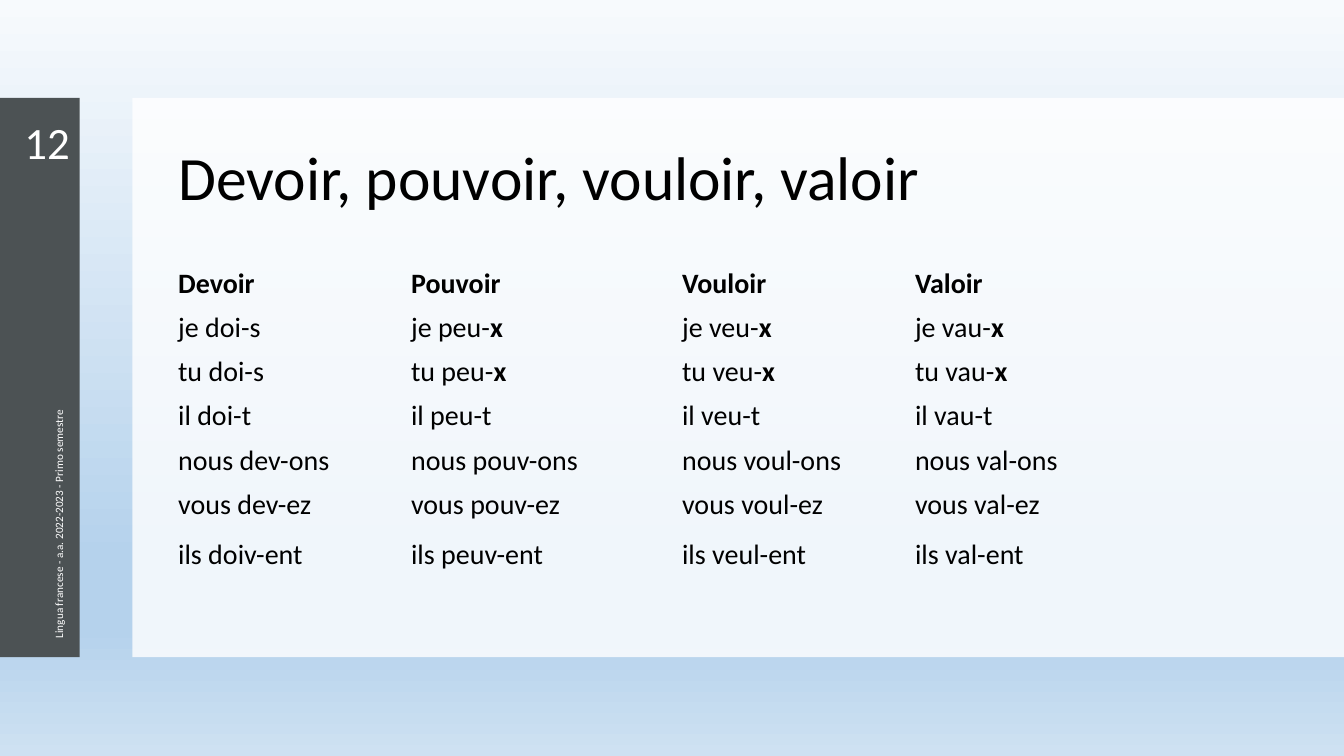
from dataclasses import dataclass

import lxml.etree
import pptx
import pptx.dml.color
import pptx.enum.shapes
import pptx.enum.text
import pptx.oxml.ns
import pptx.shapes.autoshape
import pptx.slide
import pptx.text.text
import pptx.util
from pptx.util import Cm

qn = pptx.oxml.ns.qn
Align = pptx.enum.text.PP_ALIGN
Anchor = pptx.enum.text.MSO_ANCHOR


@dataclass(frozen=True)
class Theme:
    font: str = "Calibri"
    ink: str = "000000"
    light: str = "FFFFFF"
    band: str = "4C5254"
    sky: tuple[tuple[int, str], ...] = (
        (0, "F7FAFD"), (74, "B5D2EC"), (83, "B5D2EC"), (100, "CEE1F2"))
    title_size: int = 44
    number_size: int = 32
    body_size: int = 20
    footer_size: int = 8


@dataclass(frozen=True)
class Frame:
    left: float
    top: float
    width: float
    height: float

    def lengths(self) -> tuple[pptx.util.Length, ...]:
        return Cm(self.left), Cm(self.top), Cm(self.width), Cm(self.height)


@dataclass(frozen=True)
class Verb:
    """A verb with its stems for the singular, nous/vous and ils."""
    name: str
    singular: str
    plural: str
    third_plural: str
    first_ending: str

    def forms(self) -> list[tuple[str, str]]:
        return [
            (f"je {self.singular}-", self.first_ending),
            (f"tu {self.singular}-", self.first_ending),
            (f"il {self.singular}-", "t"),
            (f"nous {self.plural}-", "ons"),
            (f"vous {self.plural}-", "ez"),
            (f"ils {self.third_plural}-", "ent"),
        ]


THEME = Theme()
SLIDE = Frame(0, 0, 33.87, 19.05)
BAND = Frame(0, 2.47, 2.01, 14.09)
PANEL = Frame(3.34, 2.47, 30.53, 14.09)
TITLE = Frame(4.24, 2.92, 26.29, 3.28)
NUMBER = Frame(0, 2.72, 2.01, 1.68)
FOOTER = Frame(-4.37, 10.19, 11.73, 0.56)
BODY = Frame(4.24, 6.65, 26.29, 9.45)
COLUMN_TABS = (5.87, 12.7, 18.57)
VERBS = (
    Verb("Devoir", "doi", "dev", "doiv", "s"),
    Verb("Pouvoir", "peu", "pouv", "peuv", "x"),
    Verb("Vouloir", "veu", "voul", "veul", "x"),
    Verb("Valoir", "vau", "val", "val", "x"),
)


def add_rectangle(page: pptx.slide.Slide, frame: Frame, color: str) -> pptx.shapes.autoshape.Shape:
    box = page.shapes.add_shape(pptx.enum.shapes.MSO_SHAPE.RECTANGLE, *frame.lengths())
    box.shadow.inherit = False
    box.line.fill.background()
    box.fill.solid()
    box.fill.fore_color.rgb = pptx.dml.color.RGBColor.from_string(color)
    return box


def set_opacity(box: pptx.shapes.autoshape.Shape, percent: int) -> None:
    color = box.fill._xPr.find(f"{qn('a:solidFill')}/{qn('a:srgbClr')}")
    lxml.etree.SubElement(color, qn("a:alpha"), val=str(percent * 1000))


def set_gradient(box: pptx.shapes.autoshape.Shape, stops: tuple[tuple[int, str], ...]) -> None:
    """Fill from top to bottom through all the given stops."""
    box.fill.gradient()
    box.fill.gradient_angle = 270
    stop_list = box.fill._xPr.find(f"{qn('a:gradFill')}/{qn('a:gsLst')}")
    for old in list(stop_list):
        stop_list.remove(old)
    for percent, color in stops:
        stop = lxml.etree.SubElement(stop_list, qn("a:gs"), pos=str(percent * 1000))
        lxml.etree.SubElement(stop, qn("a:srgbClr"), val=color)


def add_run(para: pptx.text.text._Paragraph, text: str, size: int, color: str,
            bold: bool = False) -> None:
    span = para.add_run()
    span.text = text
    span.font.name = THEME.font
    span.font.size = pptx.util.Pt(size)
    span.font.bold = bold
    span.font.color.rgb = pptx.dml.color.RGBColor.from_string(color)


def add_text_box(page: pptx.slide.Slide, frame: Frame,
                 anchor: pptx.enum.text.MSO_ANCHOR) -> pptx.shapes.autoshape.Shape:
    box = page.shapes.add_textbox(*frame.lengths())
    box.text_frame.word_wrap = True
    box.text_frame.vertical_anchor = anchor
    return box


def add_title(page: pptx.slide.Slide, text: str) -> None:
    box = page.shapes.title
    box.left, box.top, box.width, box.height = TITLE.lengths()
    box.text_frame.auto_size = pptx.enum.text.MSO_AUTO_SIZE.NONE
    box.text_frame.vertical_anchor = Anchor.MIDDLE
    para = box.text_frame.paragraphs[0]
    para.alignment = Align.LEFT
    para.line_spacing = 0.9
    add_run(para, text, THEME.title_size, THEME.ink)


def add_tab_stops(para: pptx.text.text._Paragraph) -> None:
    tabs = lxml.etree.SubElement(para._p.get_or_add_pPr(), qn("a:tabLst"))
    for position in COLUMN_TABS:
        lxml.etree.SubElement(tabs, qn("a:tab"), pos=str(int(Cm(position))), algn="l")


def add_conjugations(page: pptx.slide.Slide) -> None:
    frame = add_text_box(page, BODY, Anchor.TOP).text_frame
    headings = [(verb.name, "") for verb in VERBS]
    rows = [headings, *zip(*(verb.forms() for verb in VERBS))]
    for index, row in enumerate(rows):
        para = frame.add_paragraph() if index else frame.paragraphs[0]
        add_tab_stops(para)
        para.line_spacing = 0.9
        if index:
            para.space_before = pptx.util.Pt(14 if index == len(rows) - 1 else 10)
        for column, (stem, ending) in enumerate(row):
            lead = "\t" if column else ""
            add_run(para, lead + stem, THEME.body_size, THEME.ink, bold=index == 0)
            if ending:
                add_run(para, ending, THEME.body_size, THEME.ink, bold=ending == "x")


def main() -> None:
    deck = pptx.Presentation()
    deck.slide_width, deck.slide_height = Cm(SLIDE.width), Cm(SLIDE.height)
    page = deck.slides.add_slide(deck.slide_layouts[5])

    set_gradient(add_rectangle(page, SLIDE, THEME.light), THEME.sky)
    add_rectangle(page, BAND, THEME.band)
    set_opacity(add_rectangle(page, PANEL, THEME.light), 80)
    # The title placeholder comes first, so lift it above the backgrounds.
    page.shapes._spTree.append(page.shapes.title._element)
    add_title(page, "Devoir, pouvoir, vouloir, valoir")

    number = add_text_box(page, NUMBER, Anchor.MIDDLE).text_frame.paragraphs[0]
    number.alignment = Align.RIGHT
    add_run(number, "12", THEME.number_size, THEME.light)

    footer = add_text_box(page, FOOTER, Anchor.BOTTOM)
    footer.rotation = 270
    para = footer.text_frame.paragraphs[0]
    para.line_spacing = 0.9
    add_run(para, "Lingua francese - a.a. 2022-2023 - Primo semestre",
            THEME.footer_size, THEME.light)

    add_conjugations(page)
    deck.save("out.pptx")


if __name__ == "__main__":
    main()
